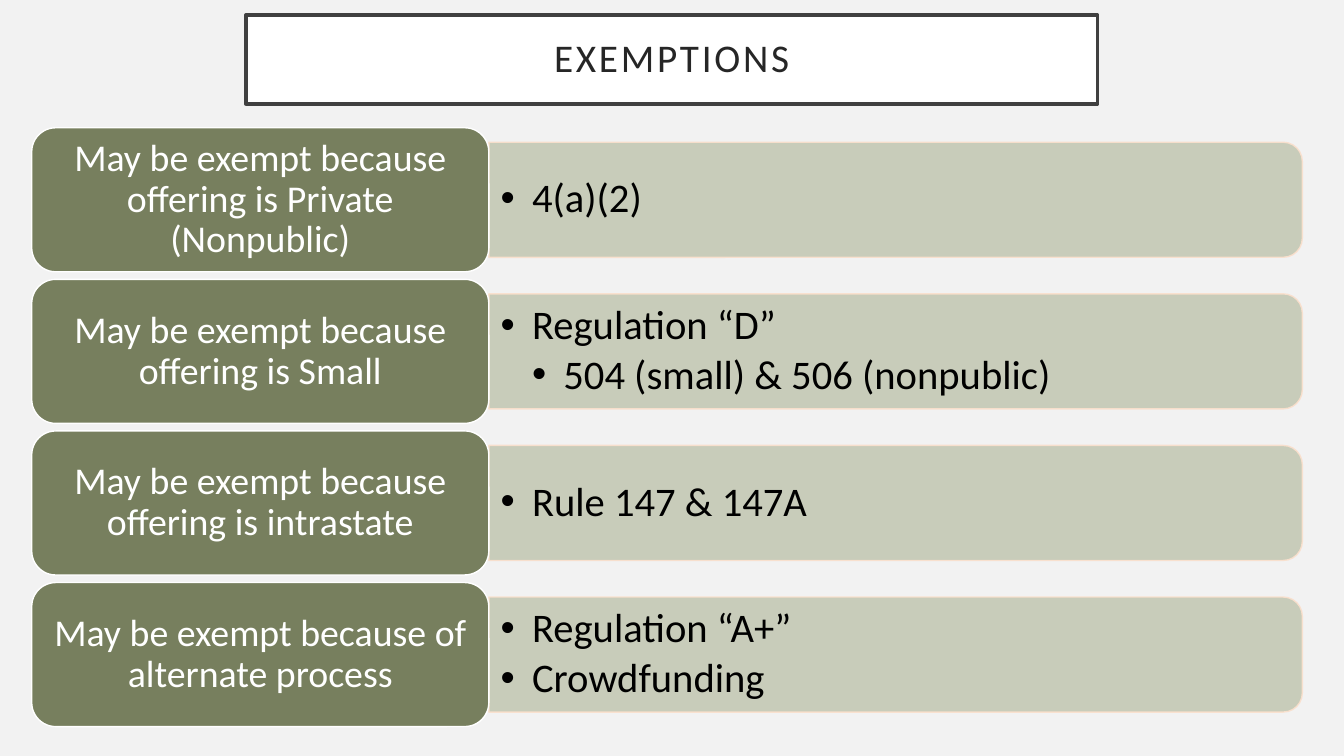
from dataclasses import dataclass

from lxml.etree import SubElement
from pptx import Presentation
from pptx.dml.color import RGBColor
from pptx.enum.shapes import MSO_SHAPE
from pptx.enum.text import MSO_ANCHOR, MSO_AUTO_SIZE, PP_ALIGN
from pptx.oxml.ns import qn
from pptx.shapes.autoshape import Shape
from pptx.slide import Slide
from pptx.text.text import TextFrame, _Paragraph
from pptx.util import Cm, Pt

COLORS = {
    "background": "F2F2F2",
    "title_fill": "FFFFFF",
    "title_border": "404040",
    "title_text": "262626",
    "label_fill": "777F5E",
    "label_text": "FFFFFF",
    "panel_fill": "C4C8B5",
    "panel_border": "FBE0CD",
    "rule_text": "000000",
}
FONT = "Calibri"

FIRST_TOP, ROW_PITCH = 3.22, 3.82
LABEL_LEFT, LABEL_WIDTH, LABEL_HEIGHT = 0.8, 11.52, 3.63
PANEL_LEFT, PANEL_LENGTH, PANEL_THICKNESS = 12.32, 20.5, 2.9
RULES_WIDTH, RULES_HEIGHT = 20.35, 2.62
BULLET_INDENT = 0.79


@dataclass(frozen=True)
class Rule:
    text: str
    level: int = 1


@dataclass(frozen=True)
class Exemption:
    reason: str
    rules: tuple[Rule, ...]


EXEMPTIONS = (
    Exemption("May be exempt because offering is Private (Nonpublic)", (Rule("4(a)(2)"),)),
    Exemption(
        "May be exempt because offering is Small",
        (Rule("Regulation “D”"), Rule("504 (small) & 506 (nonpublic)", 2)),
    ),
    Exemption("May be exempt because offering is intrastate", (Rule("Rule 147 & 147A"),)),
    Exemption(
        "May be exempt because of alternate process",
        (Rule("Regulation “A+”"), Rule("Crowdfunding")),
    ),
)


def color(name: str) -> RGBColor:
    return RGBColor.from_string(COLORS[name])


def paint(shape: Shape, fill: str, border: str, border_width: float) -> None:
    shape.shadow.inherit = False
    shape.fill.solid()
    shape.fill.fore_color.rgb = color(fill)
    shape.line.color.rgb = color(border)
    shape.line.width = Pt(border_width)


def set_frame(frame: TextFrame, inset_x: float, inset_y: float) -> None:
    frame.word_wrap = True
    frame.auto_size = MSO_AUTO_SIZE.NONE
    frame.vertical_anchor = MSO_ANCHOR.MIDDLE
    frame.margin_left = frame.margin_right = Cm(inset_x)
    frame.margin_top = frame.margin_bottom = Cm(inset_y)


def style_paragraph(paragraph: _Paragraph, size: float, text_color: str, align: PP_ALIGN) -> None:
    paragraph.alignment = align
    paragraph.line_spacing = 0.9
    for run in paragraph.runs:
        run.font.name = FONT
        run.font.size = Pt(size)
        run.font.color.rgb = color(text_color)


def add_bullet(paragraph: _Paragraph, level: int) -> None:
    properties = paragraph._p.get_or_add_pPr()
    properties.set("marL", str(Cm(BULLET_INDENT * level)))
    properties.set("indent", str(-Cm(BULLET_INDENT)))
    SubElement(properties, qn("a:buFont"), typeface="Arial")
    SubElement(properties, qn("a:buChar"), char="•")


def draw_title(slide: Slide, text: str) -> None:
    title = slide.shapes.title
    title.left, title.top, title.width, title.height = Cm(6.2), Cm(0.38), Cm(21.46), Cm(2.24)
    title.fill.solid()
    title.fill.fore_color.rgb = color("title_fill")
    title.line.color.rgb = color("title_border")
    title.line.width = Pt(2.5)
    set_frame(title.text_frame, 0.51, 0.51)
    title.text_frame.text = text
    heading = title.text_frame.paragraphs[0]
    style_paragraph(heading, 28, "title_text", PP_ALIGN.CENTER)
    heading.runs[0].font._element.set("spc", "200")


def draw_panel(slide: Slide, middle: float) -> None:
    """Draw the translucent bar, a top-rounded shape turned to round its right end."""
    panel = slide.shapes.add_shape(
        MSO_SHAPE.ROUND_2_SAME_RECTANGLE,
        Cm(PANEL_LEFT + (PANEL_LENGTH - PANEL_THICKNESS) / 2),
        Cm(middle - PANEL_LENGTH / 2),
        Cm(PANEL_THICKNESS),
        Cm(PANEL_LENGTH),
    )
    panel.rotation = 90
    paint(panel, "panel_fill", "panel_border", 1)
    for tint in panel._element.spPr.iter(qn("a:srgbClr")):
        SubElement(tint, qn("a:alpha"), val="90000")


def draw_rules(slide: Slide, rules: tuple[Rule, ...], middle: float) -> None:
    frame = slide.shapes.add_textbox(
        Cm(PANEL_LEFT), Cm(middle - RULES_HEIGHT / 2), Cm(RULES_WIDTH), Cm(RULES_HEIGHT)
    ).text_frame
    set_frame(frame, 0.3, 0.15)
    frame.text = "\n".join(rule.text for rule in rules)
    for paragraph, rule in zip(frame.paragraphs, rules):
        paragraph.level = rule.level
        style_paragraph(paragraph, 29, "rule_text", PP_ALIGN.LEFT)
        paragraph.space_before = Pt(0)
        paragraph.space_after = Pt(4.35)
        add_bullet(paragraph, rule.level)


def draw_label(slide: Slide, reason: str, top: float) -> None:
    label = slide.shapes.add_shape(
        MSO_SHAPE.ROUNDED_RECTANGLE, Cm(LABEL_LEFT), Cm(top), Cm(LABEL_WIDTH), Cm(LABEL_HEIGHT)
    )
    paint(label, "label_fill", "label_text", 1)
    set_frame(label.text_frame, 0.28, 0.15)
    label.text_frame.text = reason
    style_paragraph(label.text_frame.paragraphs[0], 27, "label_text", PP_ALIGN.CENTER)


def main() -> None:
    presentation = Presentation()
    presentation.slide_width, presentation.slide_height = Cm(33.87), Cm(19.05)
    slide = presentation.slides.add_slide(presentation.slide_layouts.get_by_name("Title Only"))
    slide.background.fill.solid()
    slide.background.fill.fore_color.rgb = color("background")
    draw_title(slide, "EXEMPTIONS")
    for row, exemption in enumerate(EXEMPTIONS):
        top = FIRST_TOP + row * ROW_PITCH
        middle = top + LABEL_HEIGHT / 2
        draw_panel(slide, middle)
        draw_rules(slide, exemption.rules, middle)
        draw_label(slide, exemption.reason, top)
    presentation.save("out.pptx")


if __name__ == "__main__":
    main()
